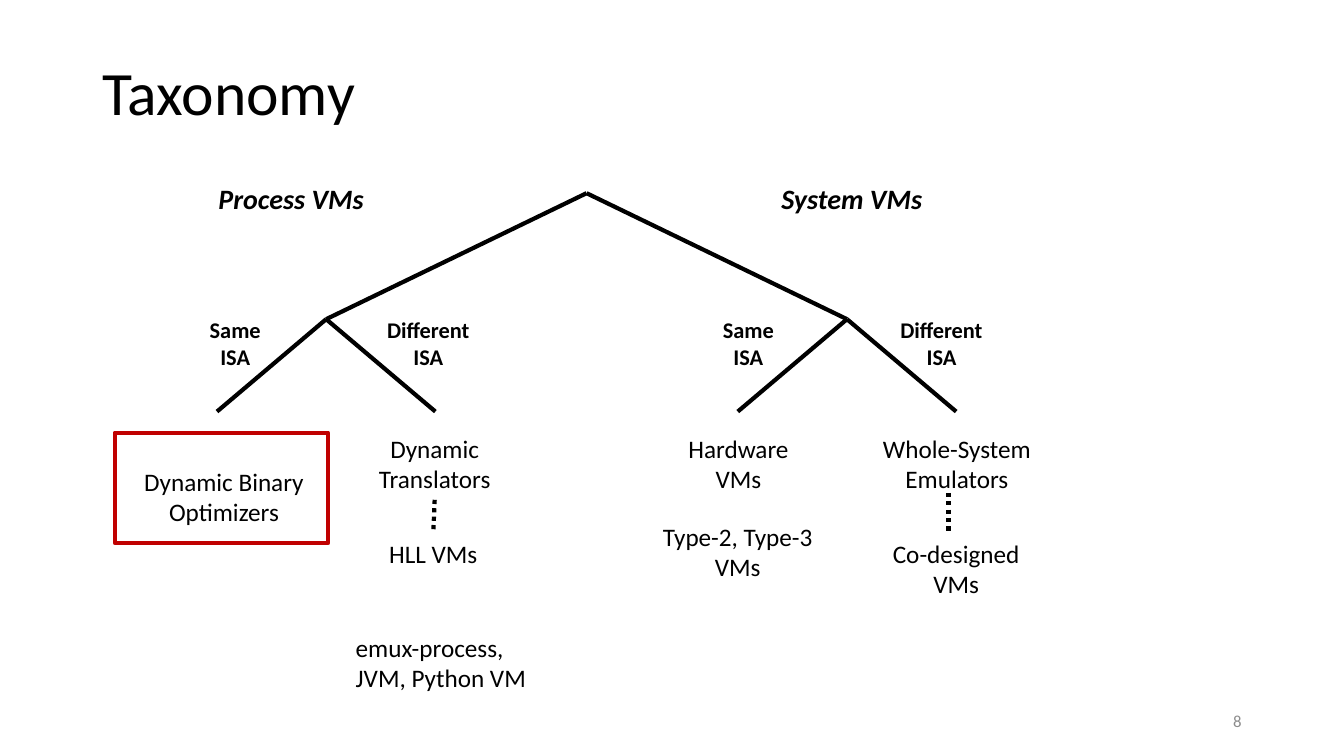
import pptx
import pptx.dml.color
import pptx.enum.dml
import pptx.enum.shapes
import pptx.enum.text
import pptx.oxml
import pptx.util
from dataclasses import dataclass

Pt = pptx.util.Pt
ALIGN = pptx.enum.text.PP_ALIGN
MIDDLE = pptx.enum.text.MSO_ANCHOR.MIDDLE


@dataclass(frozen=True)
class Theme:
    font: str = "Calibri"
    ink: str = "000000"
    muted: str = "8C8C8C"
    highlight: str = "C00000"
    title: int = 44
    family: int = 20
    branch: int = 16
    body: int = 18
    number: int = 12
    rule: float = 3
    frame: float = 2.75


THEME = Theme()

# Content: lines of text, centre x, top, width
TITLE = "Taxonomy"
PAGE_NUMBER = "8"
FAMILIES = [
    (["Process VMs"], 208.5, 126, 119),
    (["System VMs"], 609, 126, 116),
]
ISA_CHOICES = [
    (["Same", "ISA"], 168, 222, 51),
    (["Different", "ISA"], 306, 222, 75),
    (["Same", "ISA"], 534.5, 222, 51),
    (["Different", "ISA"], 672.5, 222, 75),
]
VM_KINDS = [
    (["Dynamic Binary", "Optimizers"], 160, 329.5, 153),
    (["Dynamic", "Translators"], 310.5, 306, 95),
    (["Hardware", "VMs"], 527.5, 306, 87),
    (["Whole-System", "Emulators"], 683.5, 306, 121),
    (["HLL VMs"], 309.5, 381, 78.5),
    (["Type-2, Type-3", "VMs"], 527, 368.5, 122.5),
    (["Co-designed", "VMs"], 683, 381, 106),
]
EXAMPLES = (["emux-process,", "JVM, Python VM"], 315.75, 448, 137.5)

# Tree geometry
ROOT = (419, 138)
FORK_REACH, FORK_Y = 186, 228
LEAF_REACH, LEAF_Y = 78, 294
RELATED_KINDS = [((677.5, 352), (677.5, 381)), ((310.5, 357), (309.5, 381))]
OPTIMIZER_FRAME = (82, 309, 152.5, 79)

deck = pptx.Presentation()
deck.slide_width, deck.slide_height = Pt(960), Pt(540)
slide = deck.slides.add_slide(deck.slide_layouts[5])


def rgb(colour):
    return pptx.dml.color.RGBColor.from_string(colour)


def write(frame, lines, size, align, colour=THEME.ink, bold=False, italic=False):
    for index, line in enumerate(lines):
        paragraph = frame.paragraphs[0] if index == 0 else frame.add_paragraph()
        paragraph.alignment = align
        run = paragraph.add_run()
        run.text = line
        run.font.name, run.font.size = THEME.font, Pt(size)
        run.font.bold, run.font.italic = bold, italic
        run.font.color.rgb = rgb(colour)


def add_label(label, size, align=ALIGN.CENTER, **style):
    lines, centre, top, width = label
    height = 1.22 * size * len(lines) + 7.2
    box = slide.shapes.add_textbox(Pt(centre - width / 2), Pt(top), Pt(width), Pt(height))
    box.text_frame.word_wrap = False
    write(box.text_frame, lines, size, align, **style)


def add_line(start, end, dash=None):
    line = slide.shapes.add_connector(
        pptx.enum.shapes.MSO_CONNECTOR.STRAIGHT, *map(Pt, start + end))
    line.line.color.rgb = rgb(THEME.ink)
    line.line.width = Pt(THEME.rule)
    if dash:
        line.line.dash_style = dash
    line._element.spPr.append(pptx.oxml.parse_xml(
        '<a:effectLst xmlns:a="http://schemas.openxmlformats.org/drawingml/2006/main"/>'))


# Title
title = slide.shapes.title
title.left, title.top, title.width, title.height = Pt(66), Pt(29), Pt(828), Pt(79)
title.text_frame.auto_size = pptx.enum.text.MSO_AUTO_SIZE.NONE
title.text_frame.vertical_anchor = MIDDLE
write(title.text_frame, [TITLE], THEME.title, ALIGN.LEFT)
title.text_frame.paragraphs[0].line_spacing = 0.9

# Page number
page = slide.shapes.add_textbox(Pt(678), Pt(500.5), Pt(216), Pt(28.75))
page.text_frame.word_wrap = True
page.text_frame.vertical_anchor = MIDDLE
write(page.text_frame, [PAGE_NUMBER], THEME.number, ALIGN.RIGHT, colour=THEME.muted)

# Tree: two forks, each with two leaves
for side in (-1, 1):
    fork = (ROOT[0] + side * FORK_REACH, FORK_Y)
    add_line(ROOT, fork)
    for turn in (-1, 1):
        add_line(fork, (fork[0] + turn * LEAF_REACH, LEAF_Y))

# Labels
for family in FAMILIES:
    add_label(family, THEME.family, ALIGN.LEFT, bold=True, italic=True)
for choice in ISA_CHOICES:
    add_label(choice, THEME.branch, bold=True)
for kind in VM_KINDS:
    add_label(kind, THEME.body)
add_label(EXAMPLES, THEME.body, ALIGN.LEFT)

# Dotted links between related kinds
for start, end in RELATED_KINDS:
    add_line(start, end, pptx.enum.dml.MSO_LINE.ROUND_DOT)

# Frame around the optimizers
frame = slide.shapes.add_shape(
    pptx.enum.shapes.MSO_SHAPE.RECTANGLE, *map(Pt, OPTIMIZER_FRAME))
frame.shadow.inherit = False
frame.fill.background()
frame.line.color.rgb = rgb(THEME.highlight)
frame.line.width = Pt(THEME.frame)

deck.save("out.pptx")
